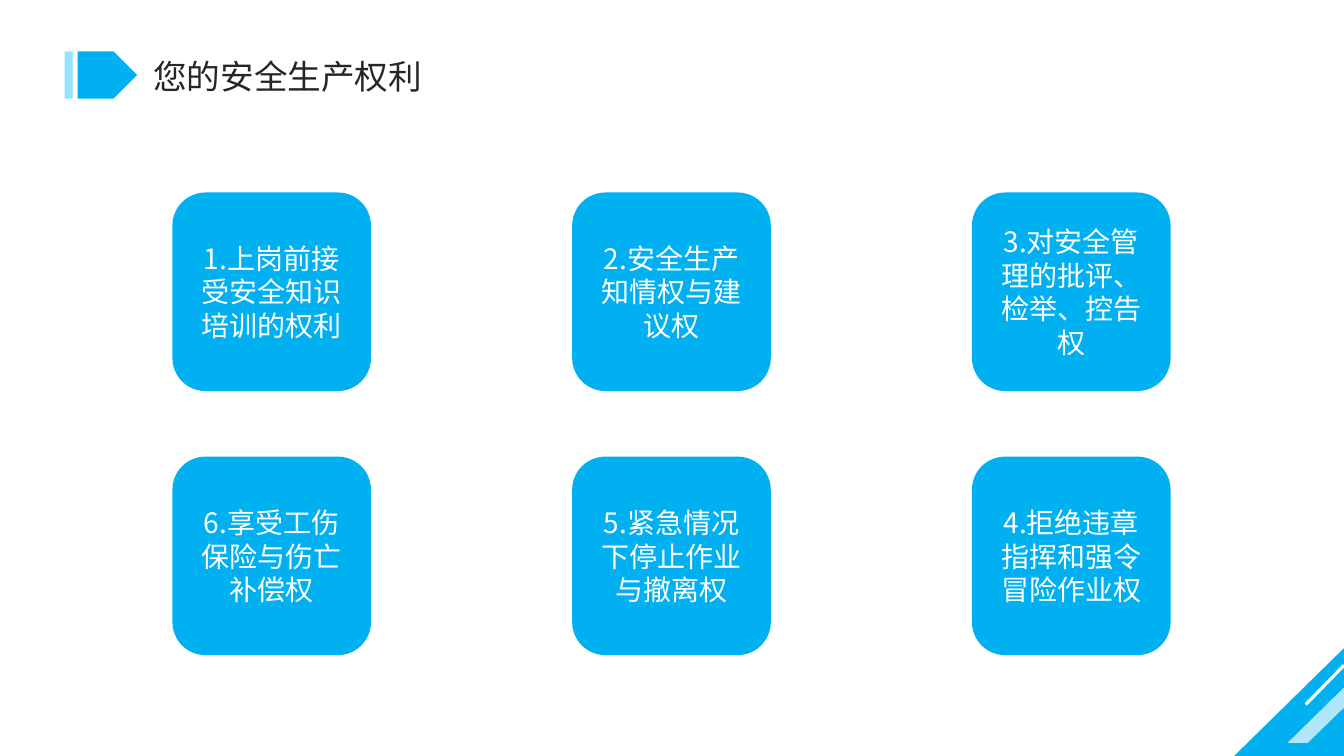
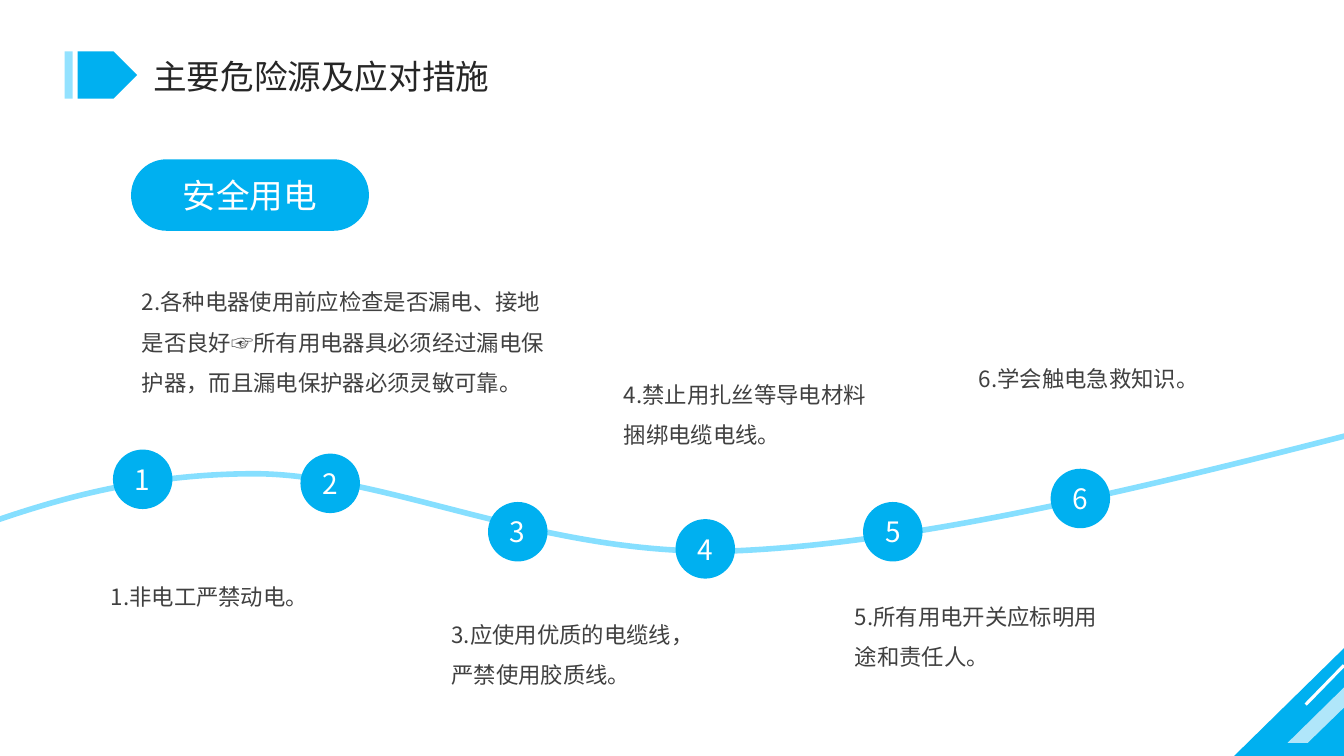
"""Build two slides on workplace safety rights and safe use of electricity."""
import lxml.etree
import pptx
import pptx.dml.color
import pptx.enum.shapes
import pptx.enum.text
import pptx.oxml.ns
import pptx.util

Inches = pptx.util.Inches
SHAPES = pptx.enum.shapes.MSO_SHAPE
ALIGN = pptx.enum.text.PP_ALIGN
ANCHOR = pptx.enum.text.MSO_ANCHOR
color = pptx.dml.color.RGBColor.from_string
qn = pptx.oxml.ns.qn

FONT = "Noto Sans CJK SC"
BLUE, PALE_BLUE, CURVE_BLUE = "00B0F0", "93E2FF", "86DFFF"
WHITE, TITLE_GRAY, TEXT_GRAY = "FFFFFF", "262626", "404040"


def write_text(shape, text, size=20, hex_color=WHITE, align=ALIGN.CENTER,
               anchor=ANCHOR.MIDDLE, line_spacing=None, margins=(0.1, 0.05)):
    frame = shape.text_frame
    frame.word_wrap = True
    frame.auto_size = pptx.enum.text.MSO_AUTO_SIZE.NONE
    frame.vertical_anchor = anchor
    frame.margin_left = frame.margin_right = Inches(margins[0])
    frame.margin_top = frame.margin_bottom = Inches(margins[1])
    paragraph = frame.paragraphs[0]
    paragraph.alignment = align
    paragraph.line_spacing = line_spacing
    run = paragraph.add_run()
    run.text = text
    run.font.size = pptx.util.Pt(size)
    run.font.color.rgb = color(hex_color)
    run.font.name = FONT
    for properties in shape.element.iter(qn("a:rPr")):
        lxml.etree.SubElement(properties, qn("a:ea"), typeface=FONT)


def add_block(slide, kind, left, top, width, height, fill=BLUE, adjustment=None):
    shape = slide.shapes.add_shape(
        kind, Inches(left), Inches(top), Inches(width), Inches(height))
    shape.shadow.inherit = False
    shape.fill.solid()
    shape.fill.fore_color.rgb = color(fill)
    shape.line.fill.background()
    if adjustment is not None:
        shape.adjustments[0] = adjustment
    return shape


presentation = pptx.Presentation()
presentation.slide_width = Inches(13.33)
presentation.slide_height = Inches(7.5)
layout = presentation.slide_layouts[5]
layout_title = layout.placeholders[0]
layout_title.left, layout_title.top = Inches(1.42), Inches(0.5)
layout_title.width, layout_title.height = Inches(10.5), Inches(0.5)

slides = []
for title in ["您的安全生产权利", "主要危险源及应对措施"]:
    slide = presentation.slides.add_slide(layout)
    write_text(slide.shapes.title, title, size=24, hex_color=TITLE_GRAY, align=ALIGN.LEFT)
    slides.append(slide)
rights_slide, electricity_slide = slides

corner = add_block(rights_slide, SHAPES.ISOSCELES_TRIANGLE, 12.24, 6.43, 1.09, 1.07, adjustment=1)
builder = rights_slide.shapes.build_freeform(Inches(13.33), Inches(6.82))
builder.add_line_segments(
    [(Inches(x), Inches(y)) for x, y in [(13.33, 7.02), (12.97, 7.37), (12.77, 7.37)]])
stripe = builder.convert_to_shape()
stripe.shadow.inherit = False
stripe.fill.solid()
stripe.fill.fore_color.rgb = color(WHITE)
stripe.line.fill.background()
stripe_color = next(stripe.element.iter(qn("a:srgbClr")))
lxml.etree.SubElement(stripe_color, qn("a:alpha"), val="69000")
streak = rights_slide.shapes.add_connector(
    pptx.enum.shapes.MSO_CONNECTOR.STRAIGHT,
    Inches(13.33), Inches(6.6), Inches(12.95), Inches(6.99))
streak.line.color.rgb = color(WHITE)
streak.line.width = pptx.util.Pt(2.25)
lxml.etree.SubElement(streak.element.spPr, qn("a:effectLst"))
title_arrow = add_block(rights_slide, SHAPES.PENTAGON, 0.77, 0.51, 0.59, 0.47)
title_bar = add_block(rights_slide, SHAPES.RECTANGLE, 0.64, 0.51, 0.08, 0.47, fill=PALE_BLUE)
for number, decoration in enumerate([corner, stripe, streak, title_arrow, title_bar], 100):
    next(decoration.element.iter(qn("p:cNvPr"))).set("id", str(number))
    layout.shapes.element.append(decoration.element)

rights = [
    ["1.上岗前接受安全知识培训的权利", "2.安全生产知情权与建议权", "3.对安全管理的批评、检举、控告权"],
    ["6.享受工伤保险与伤亡补偿权", "5.紧急情况下停止作业与撤离权", "4.拒绝违章指挥和强令冒险作业权"],
]
for row, row_texts in enumerate(rights):
    for column, text in enumerate(row_texts):
        card = add_block(rights_slide, SHAPES.ROUNDED_RECTANGLE,
                         1.71 + 3.965 * column, 1.91 + 2.62 * row, 1.97, 1.97)
        write_text(card, text, margins=(0.08, 0.04))

topic = add_block(electricity_slide, SHAPES.ROUNDED_RECTANGLE, 1.3, 1.58, 2.36, 0.71, adjustment=0.5)
write_text(topic, "安全用电", size=24)

curve_points = [(0.19, 5.07), (1.17, 4.7), (2.54, 4.7),
                (3.9, 4.71), (5.45, 5.56), (7.39, 5.46),
                (9.33, 5.36), (11.75, 4.74), (14.17, 4.11)]
builder = electricity_slide.shapes.build_freeform(Inches(-0.8), Inches(5.44))
builder.add_line_segments([(Inches(x), Inches(y)) for x, y in curve_points], close=False)
curve = builder.convert_to_shape()
curve.shadow.inherit = False
curve.fill.background()
curve.line.color.rgb = color(CURVE_BLUE)
curve.line.width = pptx.util.Pt(4)
outline = next(curve.element.iter(qn("a:path")))
segments = outline.findall(qn("a:lnTo"))
for start in range(0, len(segments), 3):
    bezier = lxml.etree.SubElement(outline, qn("a:cubicBezTo"))
    for segment in segments[start:start + 3]:
        bezier.append(segment[0])
        outline.remove(segment)

measures = [
    (4.46, 1, 5.6, 2.78, 0.93, "1.非电工严禁动电。"),
    (4.5, 1.31, 2.68, 4.22, 1.31,
     "2.各种电器使用前应检查是否漏电、接地是否良好☞所有用电器具必须经过漏电保护器，而且漏电保护器必须灵敏可靠。"),
    (4.98, 4.38, 5.98, 2.78, 0.93, "3.应使用优质的电缆线，严禁使用胶质线。"),
    (5.15, 6.09, 3.6, 2.78, 1.31, "4.禁止用扎丝等导电材料捆绑电缆电线。"),
    (4.98, 8.38, 5.8, 2.78, 0.93, "5.所有用电开关应标明用途和责任人。"),
    (4.65, 9.61, 3.44, 2.78, 1.31, "6.学会触电急救知识。"),
]
for index, (circle_top, left, top, width, height, text) in enumerate(measures):
    circle = add_block(electricity_slide, SHAPES.OVAL, 1.12 + 1.86 * index, circle_top, 0.59, 0.59)
    write_text(circle, str(index + 1))
    label = electricity_slide.shapes.add_textbox(
        Inches(left), Inches(top), Inches(width), Inches(height))
    write_text(label, text, size=16, hex_color=TEXT_GRAY, align=ALIGN.LEFT,
               anchor=ANCHOR.TOP, line_spacing=1.5)

presentation.save("out.pptx")
